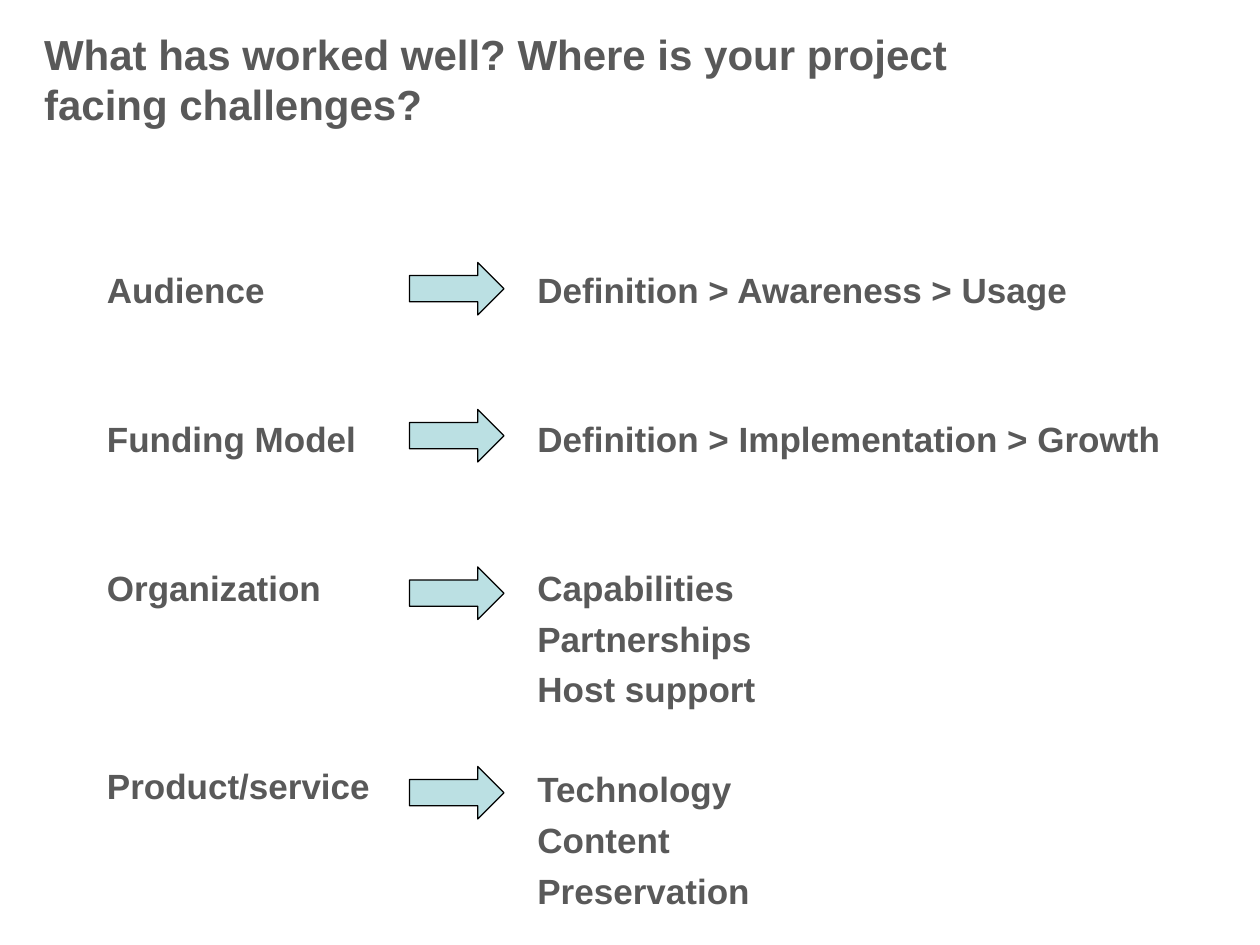
from pptx import Presentation
from pptx.dml.color import RGBColor
from pptx.enum.shapes import MSO_SHAPE
from pptx.enum.text import MSO_ANCHOR, MSO_AUTO_SIZE, PP_ALIGN
from pptx.util import Pt

RIGHT_ARROW = MSO_SHAPE.RIGHT_ARROW
MIDDLE, TOP = MSO_ANCHOR.MIDDLE, MSO_ANCHOR.TOP
NO_AUTOFIT = MSO_AUTO_SIZE.NONE
LEFT = PP_ALIGN.LEFT

COLORS = {"text": "595959", "arrow": "BBE0E3", "outline": "000000"}
FONT = "Arial"
TITLE_ONLY = 5

# Text grid: every line sits on a 28 pt pitch, and a line is 23 pt high
COLUMN_TOP, COLUMN_HEIGHT = 150, 312
LINE_PITCH, LINE_HEIGHT = 28, 23

TITLE = "What has worked well? Where is your project facing challenges?"

# Topic, grid line of its first entry, arrow top, entries
TOPICS = [
    ("Audience", 0, 150, ["Definition > Awareness > Usage"]),
    ("Funding Model", 3, 234, ["Definition > Implementation > Growth"]),
    ("Organization", 6, 324, ["Capabilities", "Partnerships", "Host support"]),
    ("Product/service", 10, 438, ["Technology", "Content", "Preservation"]),
]


def rgb(name):
    return RGBColor.from_string(COLORS[name])


def format_paragraph(paragraph, size):
    paragraph.alignment = LEFT
    for run in paragraph.runs:
        run.font.name = FONT
        run.font.size = Pt(size)
        run.font.bold = True
        run.font.color.rgb = rgb("text")


def set_title(slide):
    title = slide.shapes.title
    title.left, title.top, title.width, title.height = Pt(18), Pt(18), Pt(564), Pt(54)
    frame = title.text_frame
    frame.text = TITLE
    frame.word_wrap = True
    frame.auto_size = NO_AUTOFIT
    frame.vertical_anchor = MIDDLE
    format_paragraph(frame.paragraphs[0], 24)


def add_column(slide, left, width, entries):
    """Place (grid line, text) entries in one box, spaced by their grid lines."""
    column = slide.shapes.add_textbox(Pt(left), Pt(COLUMN_TOP), Pt(width), Pt(COLUMN_HEIGHT))
    frame = column.text_frame
    frame.word_wrap = True
    frame.auto_size = NO_AUTOFIT
    frame.vertical_anchor = TOP
    previous_line = None
    for line, text in entries:
        if previous_line is None:
            paragraph = frame.paragraphs[0]
        else:
            paragraph = frame.add_paragraph()
            paragraph.space_before = Pt((line - previous_line) * LINE_PITCH - LINE_HEIGHT)
        paragraph.text = text
        format_paragraph(paragraph, 20)
        previous_line = line


def add_arrow(slide, top):
    arrow = slide.shapes.add_shape(RIGHT_ARROW, Pt(234), Pt(top), Pt(54), Pt(30))
    arrow.shadow.inherit = False
    arrow.fill.solid()
    arrow.fill.fore_color.rgb = rgb("arrow")
    arrow.line.color.rgb = rgb("outline")
    arrow.line.width = Pt(0.75)


def main():
    presentation = Presentation()
    presentation.slide_width, presentation.slide_height = Pt(720), Pt(540)
    slide = presentation.slides.add_slide(presentation.slide_layouts[TITLE_ONLY])
    set_title(slide)

    # Topics on the left, their aspects on the right
    topics = [(line, topic) for topic, line, _, _ in TOPICS]
    aspects = [(line + offset, aspect)
               for _, line, _, entries in TOPICS
               for offset, aspect in enumerate(entries)]
    add_column(slide, 54, 234, topics)
    add_column(slide, 300, 378, aspects)

    # Arrows between the columns
    for _, _, arrow_top, _ in TOPICS:
        add_arrow(slide, arrow_top)

    presentation.save("out.pptx")


if __name__ == "__main__":
    main()
